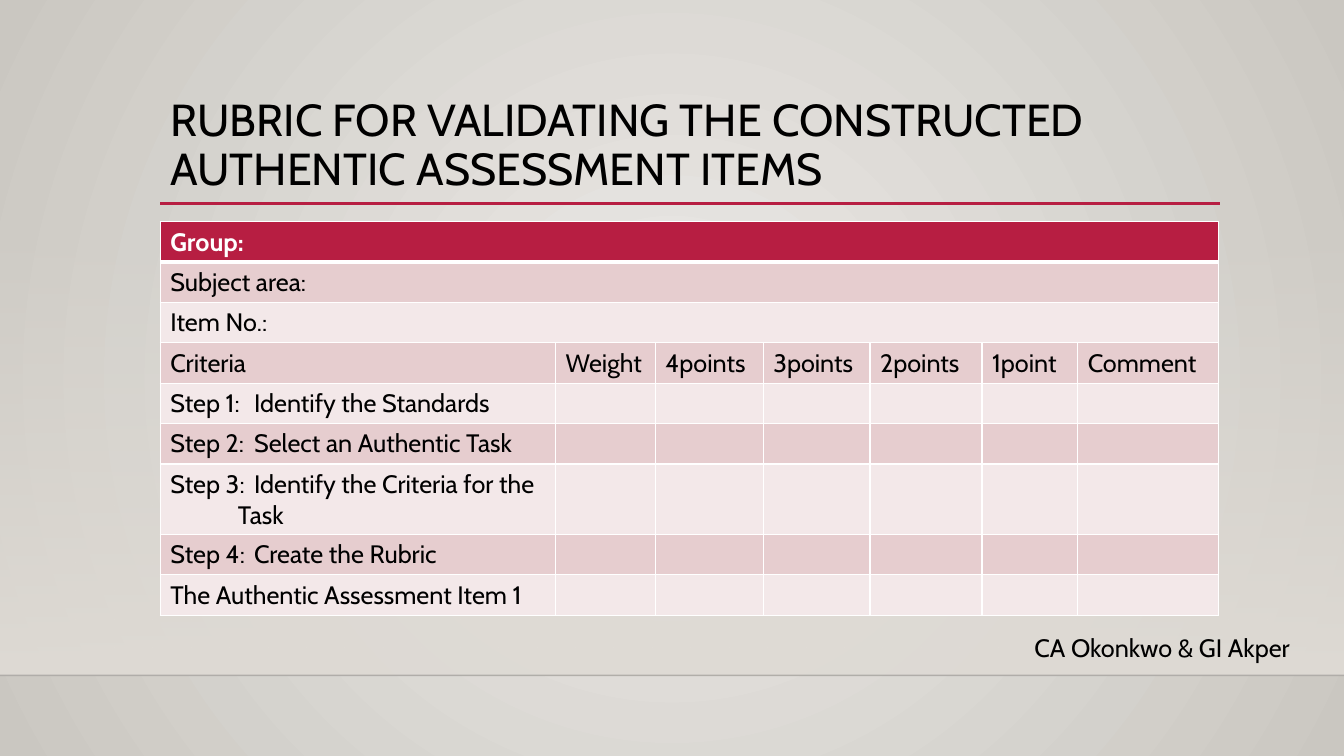
from lxml import etree
from pptx import Presentation
from pptx import util as u
from pptx.dml import color
from pptx.enum import shapes, text
from pptx.oxml import ns

In = u.Inches
FONT = "Cabin"
C = {"black": "000000", "white": "FFFFFF", "red": "B71E42", "edge": "000001",
     "dark_band": "E6CDCF", "light_band": "F3E8E9", "floor": "DFDBD5",
     "bg_center": "ECEAE7", "bg_rim": "CAC7C1"}

COLS = [3.92, 0.99, 1.07, 1.06, 1.11, 0.95, 1.4]
ROW_H = 0.4
STEP_TAB = 0.83
TASK_INDENT = 0.67
ROWS = [
    ["Group:"],
    ["Subject area:"],
    ["Item No.:"],
    ["Criteria", "Weight", "4points", "3points", "2points", "1point", "Comment"],
    ["Step 1:\tIdentify the Standards"],
    ["Step 2:\tSelect an Authentic Task"],
    ["Step 3:\tIdentify the Criteria for the\nTask"],
    ["Step 4:\tCreate the Rubric"],
    ["The Authentic Assessment Item 1"],
]
MERGED_ROWS = 3


def rgb(name):
    return color.RGBColor.from_string(C[name])


def sub(parent, tag, **attrs):
    return etree.SubElement(parent, ns.qn(tag), attrs)


def add_run(p, words, size=18, fill="black", bold=False):
    r = p.add_run()
    r.text = words
    for key, value in {"name": FONT, "size": u.Pt(size), "bold": bold}.items():
        setattr(r.font, key, value)
    r.font.color.rgb = rgb(fill)


def set_gradient(fill, *names):
    fill.gradient()
    for stop, name in zip(fill.gradient_stops, names):
        stop.color.rgb = rgb(name)


def add_background(s):
    set_gradient(s.background.fill, "bg_center", "bg_rim")
    lin = s.element.find(".//" + ns.qn("a:lin"))
    grad = lin.getparent()
    grad.remove(lin)
    circle = sub(grad, "a:path", path="circle")
    sub(circle, "a:fillToRect", l="50000", t="50000", r="50000", b="50000")


def add_floor(s):
    sp = s.shapes.add_shape(shapes.MSO_SHAPE.RECTANGLE, 0, In(2.21), In(13.33), In(4.49))
    sp.shadow.inherit = False
    sp.line.fill.background()
    set_gradient(sp.fill, "floor", "floor")
    sp.fill.gradient_angle = 270
    sub(sp.element.find(".//" + ns.qn("a:srgbClr")), "a:alpha", val="0")


def add_rule(s, x1, x2, y, name, width, opacity=100):
    line = s.shapes.add_connector(shapes.MSO_CONNECTOR.STRAIGHT, In(x1), In(y), In(x2), In(y))
    line.line.color.rgb = rgb(name)
    line.line.width = u.Pt(width)
    if opacity < 100:
        sub(line.element.find(".//" + ns.qn("a:srgbClr")), "a:alpha", val=str(opacity * 1000))
    sub(line.element.spPr, "a:effectLst")


def add_title(s, words):
    sp = s.shapes.title
    box = {"left": 1.59, "top": 0.88, "width": 10.5, "height": 1.15}
    for key, value in box.items():
        setattr(sp, key, In(value))
    tf = sp.text_frame
    tf.word_wrap = True
    tf.auto_size = text.MSO_AUTO_SIZE.NONE
    tf.vertical_anchor = text.MSO_ANCHOR.MIDDLE
    p = tf.paragraphs[0]
    p.alignment = text.PP_ALIGN.LEFT
    p.line_spacing = 0.9
    add_run(p, words, 32)


def add_credit(s, words):
    tf = s.shapes.add_textbox(In(10.16), In(6.22), In(2.99), In(0.4)).text_frame
    tf.word_wrap = True
    add_run(tf.paragraphs[0], words)


def set_borders(cell, bottom):
    tc_pr = cell._tc.get_or_add_tcPr()
    for i, (side, width) in enumerate({"L": 1, "R": 1, "T": 1, "B": bottom}.items()):
        ln = etree.Element(ns.qn("a:ln" + side), w=str(u.Pt(width)))
        sub(sub(ln, "a:solidFill"), "a:srgbClr", val=C["white"])
        tc_pr.insert(i, ln)


def fill_cell(cell, words, header):
    tf = cell.text_frame
    for i, part in enumerate(words.split("\n")):
        p = tf.add_paragraph() if i else tf.paragraphs[0]
        p_pr = p._p.get_or_add_pPr()
        if i:
            p_pr.set("marL", str(In(TASK_INDENT)))
        if "\t" in part:
            sub(sub(p_pr, "a:tabLst"), "a:tab", pos=str(In(STEP_TAB)), algn="l")
        add_run(p, part, fill="white" if header else "black", bold=header)


def add_rubric(s):
    frame = s.shapes.add_table(len(ROWS), len(COLS), In(1.59), In(2.2),
                               In(sum(COLS)), In(ROW_H * len(ROWS)))
    table = frame.table
    for column, width in zip(table.columns, COLS):
        column.width = In(width)
    for r, words in enumerate(ROWS):
        header = r == 0
        band = "red" if header else "dark_band" if r % 2 else "light_band"
        for c in range(len(COLS)):
            cell = table.cell(r, c)
            cell.fill.solid()
            cell.fill.fore_color.rgb = rgb(band)
            set_borders(cell, 3 if header else 1)
            if c < len(words):
                fill_cell(cell, words[c], header)
        if r < MERGED_ROWS:
            table.cell(r, 0).merge(table.cell(r, len(COLS) - 1))


def main():
    prs = Presentation()
    prs.slide_width, prs.slide_height = In(13.33), In(7.5)
    s = prs.slides.add_slide(prs.slide_layouts[5])

    # Backdrop
    add_background(s)
    add_floor(s)
    add_rule(s, 0, 13.33, 6.7, "edge", 1, opacity=20)

    # Heading and credit
    add_rule(s, 1.59, 12.1, 2.02, "red", 2.5)
    add_credit(s, "CA Okonkwo & GI Akper")
    add_title(s, "RUBRIC FOR VALIDATING THE CONSTRUCTED AUTHENTIC ASSESSMENT ITEMS")

    # Rubric table
    add_rubric(s)
    prs.save("out.pptx")


if __name__ == "__main__":
    main()
